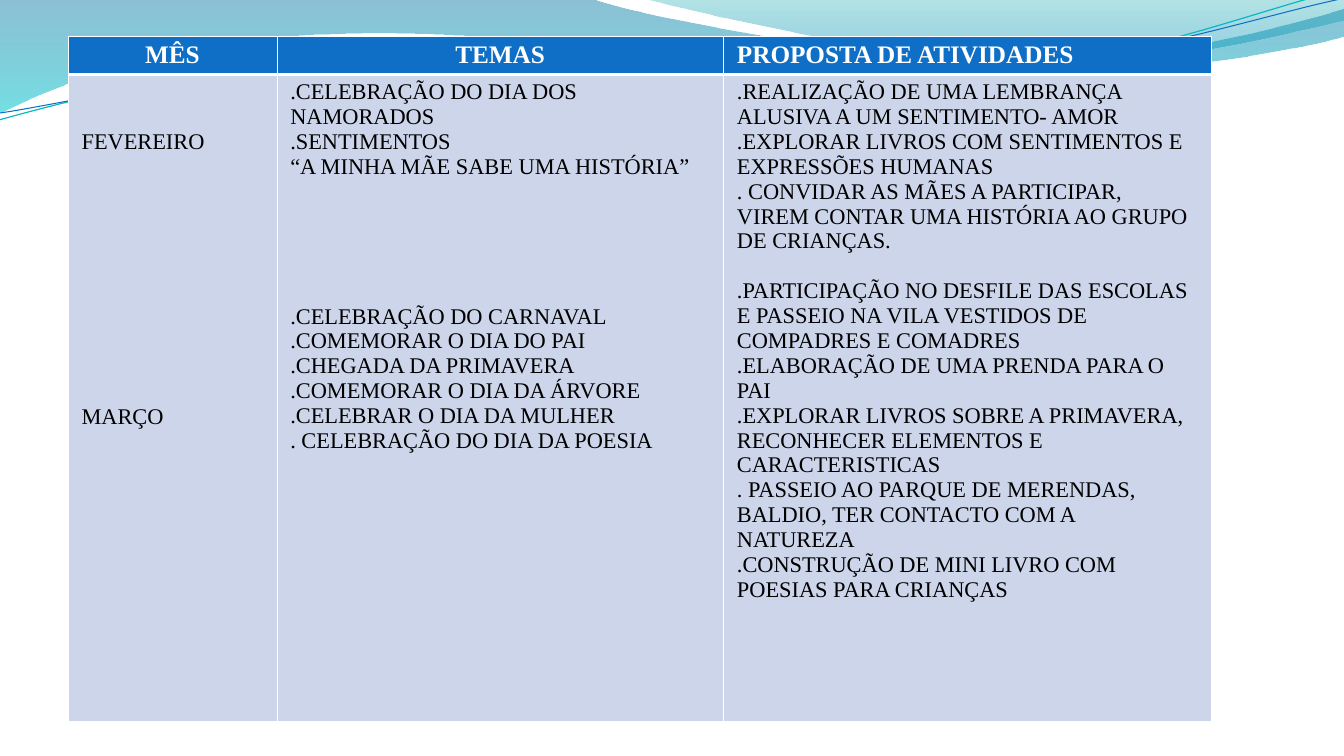
import math

import pptx
import pptx.dml.color
import pptx.enum.text
import pptx.oxml
import pptx.oxml.ns
import pptx.util
from lxml import etree
from pptx.util import Inches

RGBColor = pptx.dml.color.RGBColor
WHITE = RGBColor(0xFF, 0xFF, 0xFF)
BLACK = RGBColor(0, 0, 0)
BLUE = RGBColor(0x0F, 0x6F, 0xC6)
TURQUOISE = RGBColor(0x0A, 0xB8, 0xBF)
PALE_BLUE = RGBColor(0xCC, 0xD5, 0xEA)
DEEP_BLUE = RGBColor(0x00, 0x74, 0xA1)
CYAN = RGBColor(0x00, 0xC6, 0xCF)
TEAL = RGBColor(0x00, 0xA1, 0xA9)
SKY_BLUE = RGBColor(0x00, 0x8B, 0xBF)

FONT = "Times New Roman"
LINE_PITCH = 17.85
STRAND_TILT = 2.7
STRAND_CENTER = (6.65, 0.58)
COLUMN_WIDTHS = (2.07, 4.43, 4.84)
ROW_HEIGHTS = (0.38, 6.42)
CENTER = pptx.enum.text.PP_ALIGN.CENTER
LEFT = pptx.enum.text.PP_ALIGN.LEFT

HEADINGS = (("MÊS", CENTER), ("TEMAS", CENTER), ("PROPOSTA DE ATIVIDADES", LEFT))

# Each column: lines above its first block, lines between blocks, blocks.
PLAN = (
    (2, 10, (["FEVEREIRO"], ["MARÇO"])),
    (0, 5, (
        [".CELEBRAÇÃO DO DIA DOS NAMORADOS",
         ".SENTIMENTOS",
         "“A MINHA MÃE SABE UMA HISTÓRIA”"],
        [".CELEBRAÇÃO DO CARNAVAL",
         ".COMEMORAR O DIA DO PAI",
         ".CHEGADA DA PRIMAVERA",
         ".COMEMORAR O DIA DA ÁRVORE",
         ".CELEBRAR O DIA DA MULHER",
         ". CELEBRAÇÃO DO DIA DA POESIA"])),
    (0, 1, (
        [".REALIZAÇÃO DE UMA LEMBRANÇA ALUSIVA A UM SENTIMENTO- AMOR",
         ".EXPLORAR LIVROS COM SENTIMENTOS E EXPRESSÕES HUMANAS",
         ". CONVIDAR AS MÃES A PARTICIPAR, VIREM CONTAR UMA HISTÓRIA AO GRUPO DE CRIANÇAS."],
        [".PARTICIPAÇÃO NO DESFILE DAS ESCOLAS E PASSEIO NA VILA VESTIDOS DE COMPADRES E COMADRES",
         ".ELABORAÇÃO DE UMA PRENDA PARA O PAI",
         ".EXPLORAR LIVROS SOBRE A PRIMAVERA, RECONHECER ELEMENTOS E CARACTERISTICAS",
         ". PASSEIO AO PARQUE DE MERENDAS, BALDIO, TER CONTACTO COM A NATUREZA",
         ".CONSTRUÇÃO DE MINI LIVRO COM POESIAS PARA CRIANÇAS"])),
)

# Outlines: one point is a straight step, three points are a Bézier curve.
BROAD_WAVE = (
    [(0, 0)], [(5.87, -0.01)],
    [(6.34, 0.17), (8.85, 0.63), (10.11, 0.63)],
    [(11.38, 0.63), (12.78, 0.26), (13.33, 0.09)],
    [(13.35, 0.36)],
    [(13.11, 0.44), (11.6, 0.76), (9.94, 0.75)],
    [(8.29, 0.75), (5.09, 0.28), (3.43, 0.34)],
    [(1.72, 0.36), (0.61, 0.83), (-0.01, 1.13)],
    [(0, 0)],
)
RIGHT_WAVE = (
    [(6.39, -0.01)],
    [(6.79, 0.11), (9.09, 0.62), (10.25, 0.65)],
    [(11.41, 0.69), (12.82, 0.32), (13.33, 0.21)],
    [(13.33, 0)], [(6.39, -0.01)],
)
TURQUOISE_STRAND = (
    [(-0.01, 1.19)],
    [(0.64, 1.01), (2.11, 0.62), (3.69, 0.55)],
    [(5.27, 0.48), (7.9, 0.87), (9.5, 0.76)],
    [(11.1, 0.66), (12.52, 0.08), (13.31, -0.1)],
)
BLUE_STRAND = (
    [(0, 1.12)],
    [(0.63, 1.03), (2.18, 0.66), (3.78, 0.59)],
    [(5.37, 0.53), (7.96, 0.82), (9.55, 0.72)],
    [(11.15, 0.62), (12.55, 0.14), (13.34, -0.02)],
)


def level(point):
    """Turn a point of a tilted strand to where it lies before rotation."""
    angle = math.radians(STRAND_TILT)
    dx, dy = (value - center for value, center in zip(point, STRAND_CENTER))
    return (STRAND_CENTER[0] + dx * math.cos(angle) - dy * math.sin(angle),
            STRAND_CENTER[1] + dx * math.sin(angle) + dy * math.cos(angle))


def add_outline(slide, outline, close):
    """Build a freeform through the step ends, then bend its curved steps."""
    ends = [(Inches(x), Inches(y)) for x, y in (step[-1] for step in outline)]
    builder = slide.shapes.build_freeform(*ends[0])
    builder.add_line_segments(ends[1:], close=close)
    shape = builder.convert_to_shape()
    shape.shadow.inherit = False
    segments = list(shape._element.iter(pptx.oxml.ns.qn("a:lnTo")))
    for segment, step in zip(segments, outline[1:]):
        if len(step) == 1:
            continue
        curve = etree.Element(pptx.oxml.ns.qn("a:cubicBezTo"))
        for x, y in step:
            etree.SubElement(curve, pptx.oxml.ns.qn("a:pt"),
                             x=str(Inches(x) - shape.left), y=str(Inches(y) - shape.top))
        segment.getparent().replace(segment, curve)
    return shape


def add_wave(slide, outline, stops):
    """Add a band shaded from top to bottom; stops hold colour and opacity."""
    wave = add_outline(slide, outline, True)
    wave.line.fill.background()
    wave.fill.gradient()
    wave.fill.gradient_angle = 270
    for stop, (color, opacity) in zip(wave.fill.gradient_stops, stops):
        stop.color.rgb = color
    colors = wave.fill._xPr.iter(pptx.oxml.ns.qn("a:srgbClr"))
    for element, (color, opacity) in zip(colors, stops):
        etree.SubElement(element, pptx.oxml.ns.qn("a:alpha"), val=str(opacity * 1000))


def add_strand(slide, outline, color, width):
    strand = add_outline(slide, [[level(point) for point in step] for step in outline], False)
    strand.rotation = 360 - STRAND_TILT
    strand.fill.background()
    strand.line.color.rgb = color
    strand.line.width = pptx.util.Pt(width)


def format_cell(cell, fill, top, bottom):
    """Set the fill, insets and white borders; top and bottom are in points."""
    properties = cell._tc.get_or_add_tcPr()
    for side, width in (("L", 1), ("R", 1), ("T", top), ("B", bottom)):
        border = etree.SubElement(
            properties, pptx.oxml.ns.qn("a:ln" + side), w=str(pptx.util.Pt(width)))
        solid = etree.SubElement(border, pptx.oxml.ns.qn("a:solidFill"))
        etree.SubElement(solid, pptx.oxml.ns.qn("a:srgbClr"), val=str(WHITE))
    cell.fill.solid()
    cell.fill.fore_color.rgb = fill
    cell.margin_left = Inches(0.13)
    cell.margin_right = Inches(0.14)
    cell.margin_top = cell.margin_bottom = Inches(0.05)


def format_paragraph(paragraph, size, color, bold):
    paragraph.font.name = FONT
    paragraph.font.size = pptx.util.Pt(size)
    paragraph.font.color.rgb = color
    paragraph.font.bold = bold


def fill_heading(cell, text, alignment):
    format_cell(cell, BLUE, 1, 3)
    cell.text = text
    paragraph = cell.text_frame.paragraphs[0]
    paragraph.alignment = alignment
    format_paragraph(paragraph, 18, WHITE, True)


def fill_plan(cell, lines_above, lines_between, blocks):
    format_cell(cell, PALE_BLUE, 3, 1)
    cell.margin_top += pptx.util.Pt(lines_above * LINE_PITCH)
    cell.text = "\n".join(line for block in blocks for line in block)
    paragraphs = cell.text_frame.paragraphs
    for paragraph in paragraphs:
        format_paragraph(paragraph, 16, BLACK, False)
    second_block = paragraphs[len(blocks[0])]
    second_block.space_before = pptx.util.Pt(lines_between * LINE_PITCH)


def add_plan_table(slide):
    table = slide.shapes.add_table(
        2, 3, Inches(0.68), Inches(0.36),
        Inches(sum(COLUMN_WIDTHS)), Inches(sum(ROW_HEIGHTS))).table
    for column, width in zip(table.columns, COLUMN_WIDTHS):
        column.width = Inches(width)
    for row, height in zip(table.rows, ROW_HEIGHTS):
        row.height = Inches(height)
    for index, (heading, plan) in enumerate(zip(HEADINGS, PLAN)):
        fill_heading(table.cell(0, index), *heading)
        fill_plan(table.cell(1, index), *plan)


def main():
    presentation = pptx.Presentation()
    presentation.slide_width = Inches(13.33)
    presentation.slide_height = Inches(7.5)
    slide = presentation.slides.add_slide(presentation.slide_layouts[6])
    add_wave(slide, BROAD_WAVE, ((DEEP_BLUE, 45), (CYAN, 55)))
    add_wave(slide, RIGHT_WAVE, ((TEAL, 30), (SKY_BLUE, 45)))
    add_strand(slide, TURQUOISE_STRAND, TURQUOISE, 0.85)
    add_strand(slide, BLUE_STRAND, BLUE, 0.75)
    add_plan_table(slide)
    presentation.save("out.pptx")


if __name__ == "__main__":
    main()
